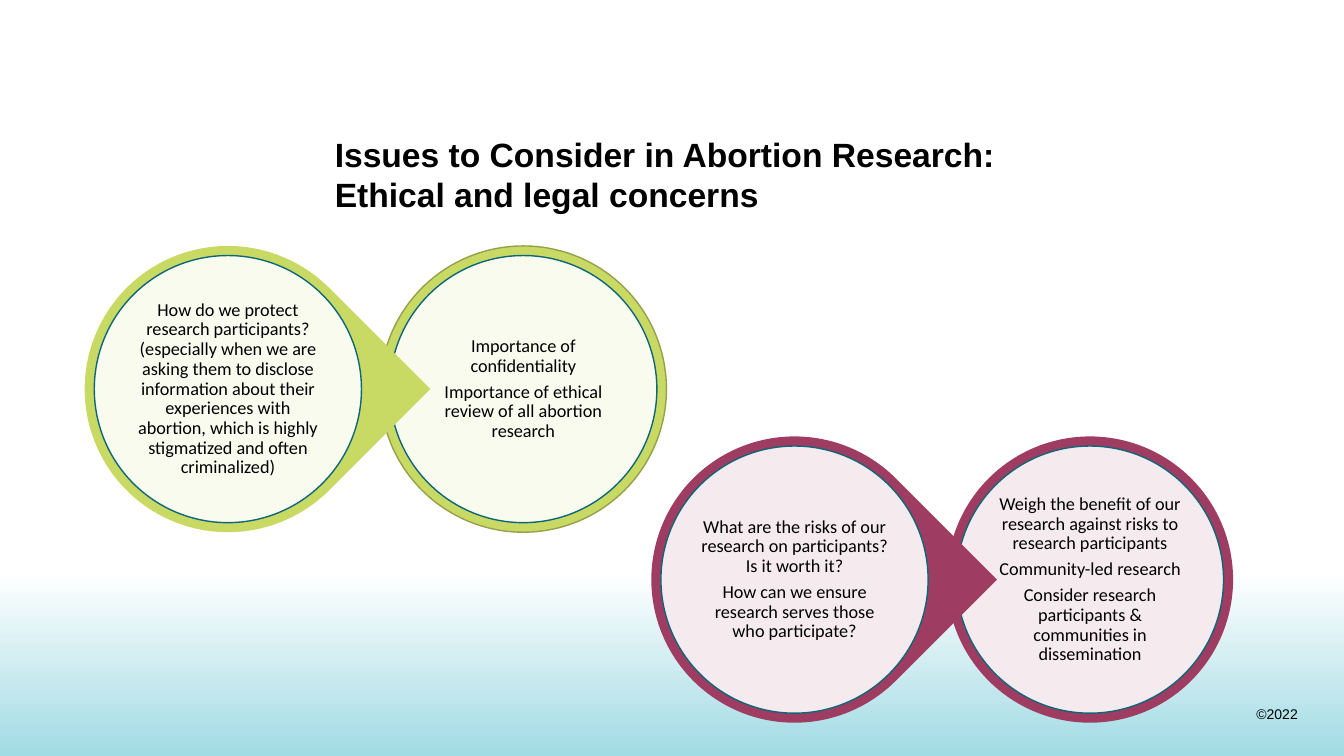
from lxml.etree import SubElement
from pptx import Presentation
from pptx.dml.color import RGBColor
from pptx.enum.shapes import MSO_SHAPE
from pptx.enum.text import MSO_ANCHOR, MSO_AUTO_SIZE, PP_ALIGN
from pptx.oxml.ns import qn
from pptx.util import Inches, Pt

BLACK = RGBColor(0x00, 0x00, 0x00)
WHITE = RGBColor(0xFF, 0xFF, 0xFF)
AQUA = RGBColor(0xA1, 0xDB, 0xE4)
TEAL = RGBColor(0x0E, 0x67, 0x79)
LIME = RGBColor(0xC9, 0xDA, 0x64)
OLIVE = RGBColor(0x95, 0xA1, 0x4A)
PLUM = RGBColor(0x9F, 0x3C, 0x61)

RING, DISC, LABEL = 2.84, 2.65, 1.89
PITCH = 2.93

PAIRS = [
    (0.84, 2.44, LIME, OLIVE,
     ["How do we protect research participants? (especially when we are asking "
      "them to disclose information about their experiences with abortion, "
      "which is highly stigmatized and often criminalized)"],
     ["Importance of confidentiality",
      "Importance of ethical review of all abortion research"]),
    (6.46, 4.33, PLUM, None,
     ["What are the risks of our research on participants? Is it worth it?",
      "How can we ensure research serves those who participate?"],
     ["Weigh the benefit of our research against risks to research participants",
      "Community-led research",
      "Consider research participants & communities in dissemination"]),
]


class SlideBuilder:
    title_font = {"name": "Arial", "size": Pt(24), "bold": True}
    note_font = {"name": "Arial", "size": Pt(10)}
    body_font = {"name": "Calibri", "size": Pt(13)}
    body_format = {"alignment": PP_ALIGN.CENTER, "line_spacing": 0.9,
                   "space_after": Pt(4.5)}
    body_frame = {"word_wrap": True, "vertical_anchor": MSO_ANCHOR.MIDDLE,
                  **{f"margin_{side}": Inches(0.02)
                     for side in ("left", "right", "top", "bottom")}}

    def __init__(self, prs):
        self.s = prs.slides.add_slide(prs.slide_layouts[5])

    def apply(self, target, values):
        for name, value in values.items():
            setattr(target, name, value)

    def fill_text(self, tf, lines, font, layout):
        for i, line in enumerate(lines):
            p = tf.paragraphs[0] if i == 0 else tf.add_paragraph()
            p.text = line
            self.apply(p, layout)
            for r in p.runs:
                self.apply(r.font, font)
                r.font.color.rgb = BLACK

    def title(self, text, *box):
        sp = self.s.shapes.title
        self.apply(sp, dict(zip(("left", "top", "width", "height"), map(Inches, box))))
        tf = sp.text_frame
        self.apply(tf, {"auto_size": MSO_AUTO_SIZE.NONE, "word_wrap": True,
                        "vertical_anchor": MSO_ANCHOR.TOP})
        self.fill_text(tf, [text], self.title_font, {"alignment": PP_ALIGN.LEFT})

    def shape(self, shapes, kind, box, fill=None, line=None):
        sp = shapes.add_shape(kind, *map(Inches, box))
        sp.shadow.inherit = False
        if fill is not None:
            sp.fill.solid()
            sp.fill.fore_color.rgb = fill
        if line is None:
            sp.line.fill.background()
        else:
            sp.line.color.rgb = line
            sp.line.width = Pt(1)
        return sp

    def gradient_band(self, *box):
        sp = self.shape(self.s.shapes, MSO_SHAPE.RECTANGLE, box)
        sp.fill.gradient()
        sp.fill.gradient_angle = 270
        for stop, color in zip(sp.fill.gradient_stops, (WHITE, AQUA)):
            stop.color.rgb = color

    def note(self, text, *box):
        tf = self.s.shapes.add_textbox(*map(Inches, box)).text_frame
        tf.word_wrap = False
        self.fill_text(tf, [text], self.note_font, {"alignment": PP_ALIGN.RIGHT})

    def circle(self, shapes, kind, x, y, fill, line, lines):
        def centred(size):
            gap = (RING - size) / 2
            return x + gap, y + gap, size, size

        ring = self.shape(shapes, kind, centred(RING), fill, line)
        if kind == MSO_SHAPE.TEAR:
            ring.adjustments[0] = 1
            ring.rotation = 45
        disc = self.shape(shapes, MSO_SHAPE.OVAL, centred(DISC), WHITE, TEAL)
        color = disc.element.spPr.find(qn("a:solidFill"))[0]
        SubElement(color, qn("a:alpha"), val="90000")
        tf = shapes.add_textbox(*map(Inches, centred(LABEL))).text_frame
        self.apply(tf, self.body_frame)
        self.fill_text(tf, lines, self.body_font, self.body_format)

    def pair(self, x, y, fill, line, question, answer):
        shapes = self.s.shapes.add_group_shape().shapes
        self.circle(shapes, MSO_SHAPE.OVAL, x + PITCH, y, fill, line, answer)
        self.circle(shapes, MSO_SHAPE.TEAR, x, y, fill, None, question)


def main():
    prs = Presentation()
    prs.slide_width, prs.slide_height = Inches(13.33), Inches(7.5)
    slide = SlideBuilder(prs)
    slide.gradient_band(0, 5.67, 13.33, 1.83)
    slide.note("©2022", 12.36, 6.95, 0.61, 0.27)
    slide.title("Issues to Consider in Abortion Research:\vEthical and legal concerns",
                3.22, 1.28, 8.31, 0.72)
    for pair in PAIRS:
        slide.pair(*pair)
    prs.save("out.pptx")


if __name__ == "__main__":
    main()
